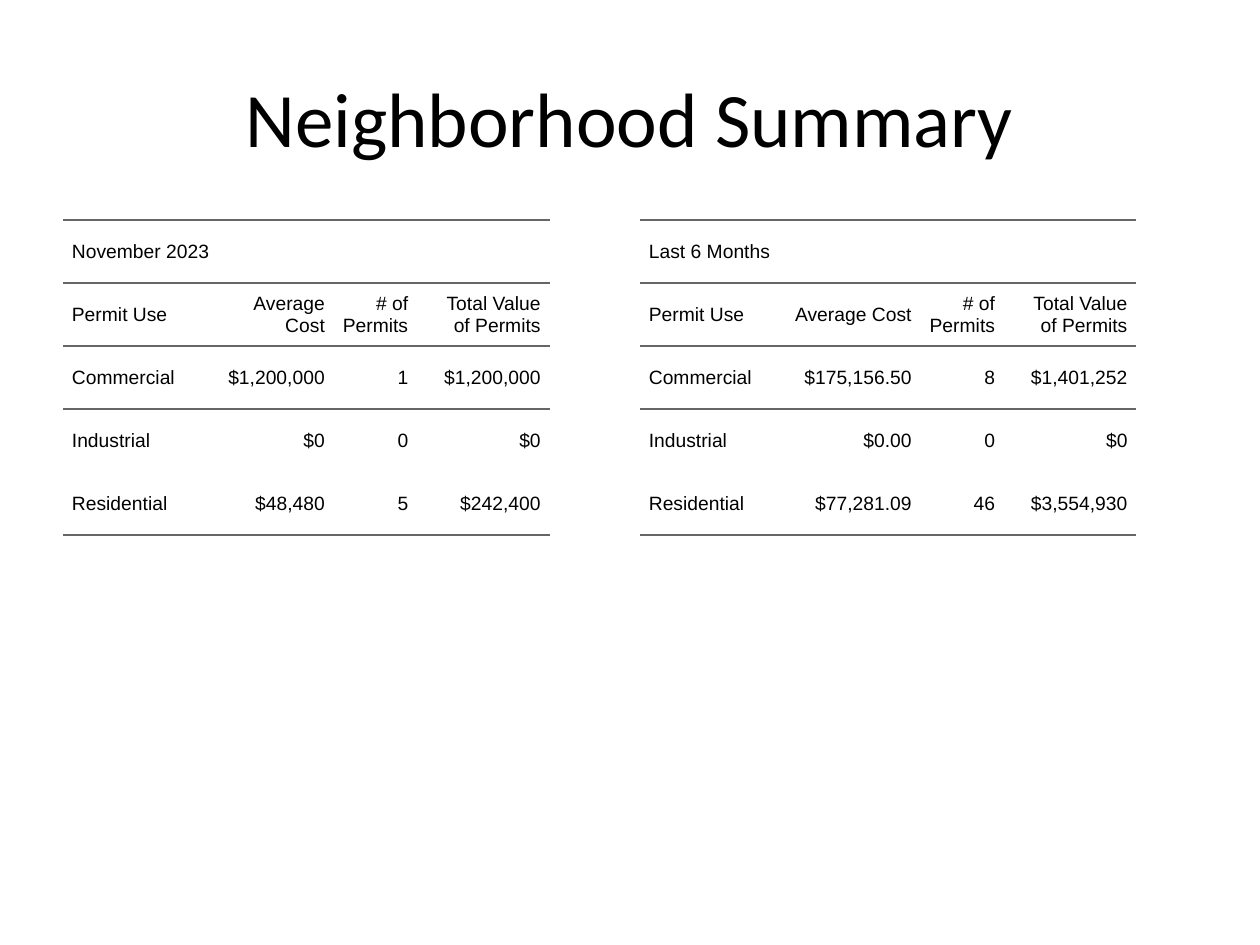
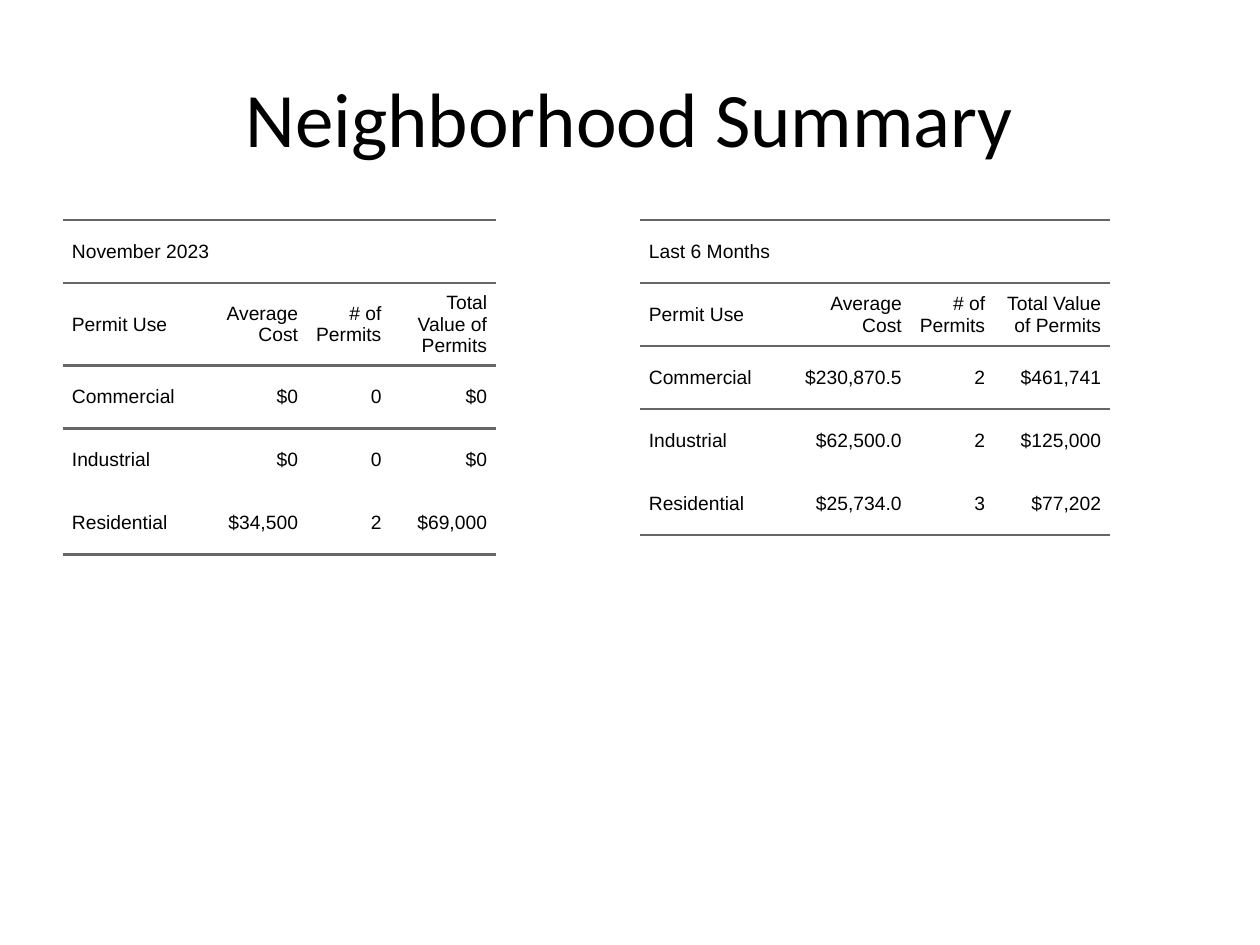
"""Build two neighborhood summary slides, each with a monthly and a six-month permit table."""
from lxml import etree
from pptx import Presentation
from pptx.dml.color import RGBColor
from pptx.enum.text import MSO_ANCHOR, PP_ALIGN
from pptx.oxml.ns import qn
from pptx.util import Cm, Pt

MIDDLE = MSO_ANCHOR.MIDDLE
LEFT, CENTER, RIGHT = PP_ALIGN.LEFT, PP_ALIGN.CENTER, PP_ALIGN.RIGHT
BLACK = RGBColor(0x00, 0x00, 0x00)
RULE_GRAY = RGBColor(0x66, 0x66, 0x66)
RULE_WIDTH = Pt(1.5)
NO_STYLE = "{2D5ABB26-0587-4C30-8999-92F81FD0307C}"

TITLE = "Neighborhood Summary"
TITLE_BOX = {"left": Cm(1.27), "top": Cm(0.76), "width": Cm(22.86), "height": Cm(3.18)}
TITLE_FONT = {"name": "Calibri", "size": Pt(44)}
TABLE_FONT = {"name": "Arial", "size": Pt(11)}
CELL_FORMAT = {"vertical_anchor": MIDDLE, "margin_left": Cm(0.18), "margin_right": Cm(0.18),
               "margin_top": Cm(0.18), "margin_bottom": Cm(0.18)}
TABLE_LEFTS = (1.27, 12.9)
TABLE_TOP = 4.44
ROW_HEIGHT = 1.27
USE_WIDTH, COUNT_WIDTH = 2.79, 1.68
PERIODS = ("November 2023", "Last 6 Months")
HEADINGS = ("Permit Use", "Average Cost", "# of Permits", "Total Value of Permits")
USES = ("Commercial", "Industrial", "Residential")
RULED_SIDES = {0: ("lnT", "lnB"), 1: ("lnT", "lnB"), 2: ("lnT",), 4: ("lnB",)}

SLIDES = [
    [
        {"cost_width": 2.67, "total_width": 2.67,
         "values": [("$1,200,000", "1", "$1,200,000"),
                    ("$0", "0", "$0"),
                    ("$48,480", "5", "$242,400")]},
        {"cost_width": 2.87, "total_width": 2.67,
         "values": [("$175,156.50", "8", "$1,401,252"),
                    ("$0.00", "0", "$0"),
                    ("$77,281.09", "46", "$3,554,930")]},
    ],
    [
        {"cost_width": 2.13, "total_width": 2.13,
         "values": [("$0", "0", "$0"),
                    ("$0", "0", "$0"),
                    ("$34,500", "2", "$69,000")]},
        {"cost_width": 2.67, "total_width": 2.34,
         "values": [("$230,870.5", "2", "$461,741"),
                    ("$62,500.0", "2", "$125,000"),
                    ("$25,734.0", "3", "$77,202")]},
    ],
]


def write(tf, text, font, align):
    p = tf.paragraphs[0]
    p.alignment = align
    r = p.add_run()
    r.text = text
    for name, value in font.items():
        setattr(r.font, name, value)
    r.font.color.rgb = BLACK


def add_rule(cell, side):
    ln = etree.SubElement(cell._tc.get_or_add_tcPr(), qn(f"a:{side}"), w=str(RULE_WIDTH))
    fill = etree.SubElement(ln, qn("a:solidFill"))
    etree.SubElement(fill, qn("a:srgbClr"), val=str(RULE_GRAY))


prs = Presentation()
prs.slide_width, prs.slide_height = Cm(25.4), Cm(19.05)
title_only = prs.slide_layouts[5]

for summaries in SLIDES:
    s = prs.slides.add_slide(title_only)
    title = s.shapes.title
    for name, value in TITLE_BOX.items():
        setattr(title, name, value)
    title.text_frame.vertical_anchor = MIDDLE
    write(title.text_frame, TITLE, TITLE_FONT, CENTER)

    for left, period, summary in zip(TABLE_LEFTS, PERIODS, summaries):
        rows = [(period, "", "", ""), HEADINGS]
        rows += [(use, *values) for use, values in zip(USES, summary["values"])]
        widths = (USE_WIDTH, summary["cost_width"], COUNT_WIDTH, summary["total_width"])
        table = s.shapes.add_table(len(rows), len(widths), Cm(left), Cm(TABLE_TOP),
                                   Cm(sum(widths)), Cm(ROW_HEIGHT * len(rows))).table
        table.first_row = table.horz_banding = False
        table._tbl.tblPr.find(qn("a:tableStyleId")).text = NO_STYLE
        for column, width in zip(table.columns, widths):
            column.width = Cm(width)
        table.cell(0, 0).merge(table.cell(0, len(widths) - 1))

        for i, row in enumerate(rows):
            table.rows[i].height = Cm(ROW_HEIGHT)
            for j, text in enumerate(row):
                cell = table.cell(i, j)
                for name, value in CELL_FORMAT.items():
                    setattr(cell, name, value)
                for side in RULED_SIDES.get(i, ()):
                    add_rule(cell, side)
                cell.fill.background()
                if text:
                    write(cell.text_frame, text, TABLE_FONT, RIGHT if j else LEFT)

prs.save("out.pptx")
